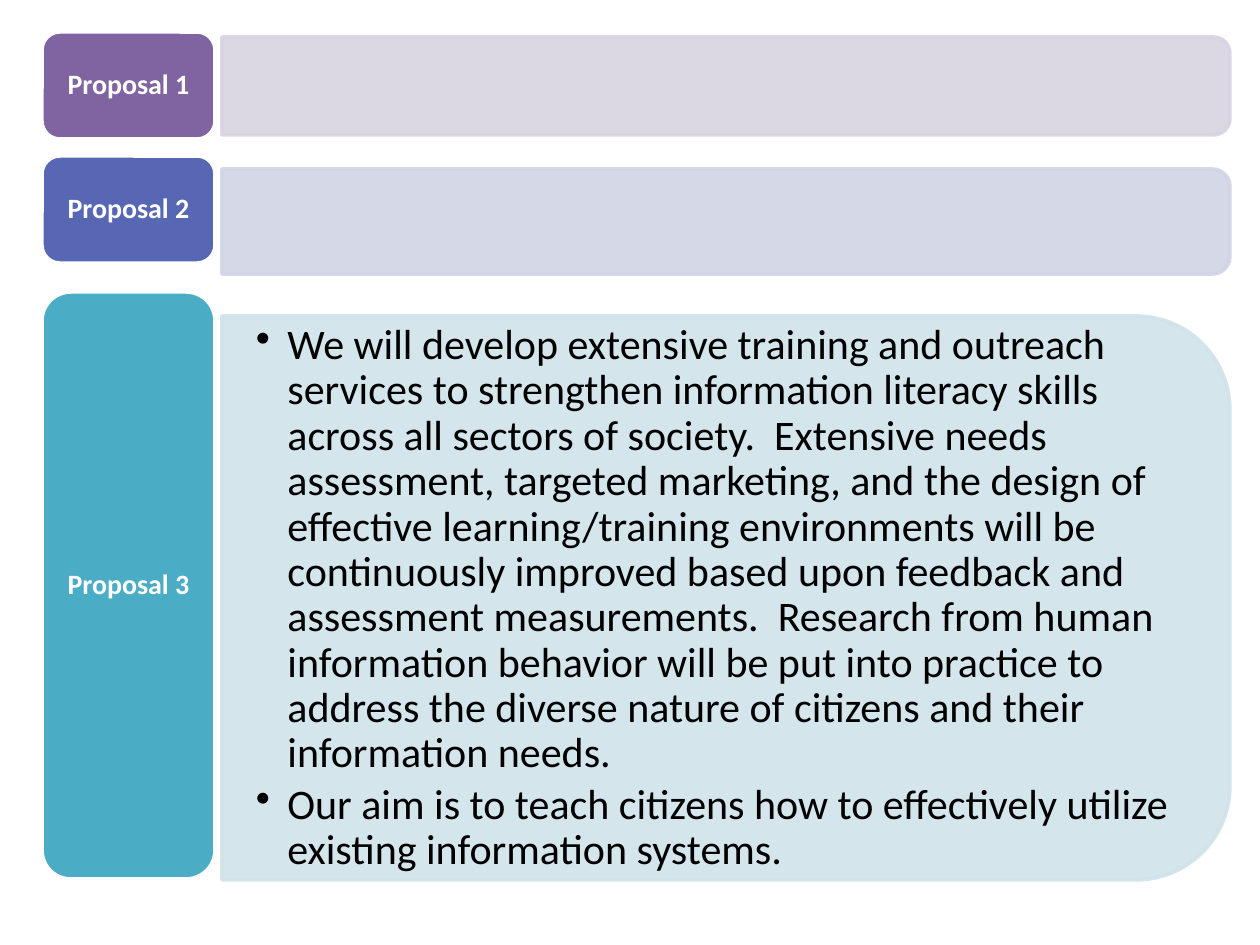
import pptx
import pptx.util
import pptx.dml.color
import pptx.enum.shapes
import pptx.enum.text
import pptx.oxml.ns
import lxml.etree

PX = 914400 / 126
HUES = {
    "white": "FFFFFF", "black": "000000",
    "purple": "8064A2", "lilac": "D8D3E0",
    "blue": "5767B4", "mist": "D1D4E5",
    "teal": "4BACC6", "ice": "D0E3EA",
}
KIND = pptx.enum.shapes.MSO_SHAPE
ALIGN = pptx.enum.text.PP_ALIGN
QN = pptx.oxml.ns.qn

deck = pptx.Presentation()
deck.slide_width = pptx.util.Inches(10)
deck.slide_height = pptx.util.Inches(7.5)
slide = deck.slides.add_slide(deck.slide_layouts[6])


def block(kind, box, fill, edge):
    shape = slide.shapes.add_shape(kind, *[round(n * PX) for n in box])
    shape.shadow.inherit = False
    shape.fill.solid()
    shape.fill.fore_color.rgb = pptx.dml.color.RGBColor.from_string(HUES[fill])
    shape.line.color.rgb = pptx.dml.color.RGBColor.from_string(HUES[edge])
    shape.line.width = pptx.util.Pt(2)
    return shape


def write(shape, lines, pads, look, form):
    frame = shape.text_frame
    frame.word_wrap = True
    frame.vertical_anchor = pptx.enum.text.MSO_ANCHOR.MIDDLE
    for side, pad in zip(("left", "top", "right", "bottom"), pads):
        setattr(frame, "margin_" + side, round(pad * PX))
    frame.text = "\n".join(lines)
    for para in frame.paragraphs:
        for name, value in form.items():
            setattr(para, name, value)
        font = para.runs[0].font
        for name, value in look.items():
            if name == "color":
                font.color.rgb = pptx.dml.color.RGBColor.from_string(HUES[value])
            else:
                setattr(font, name, value)


label = {"name": "Calibri", "size": pptx.util.Pt(16), "bold": True, "color": "white"}
body = {"name": "Calibri", "size": pptx.util.Pt(24), "color": "black"}
center = {"alignment": ALIGN.CENTER, "line_spacing": 0.9}
listed = {"alignment": ALIGN.LEFT, "line_spacing": 0.9,
          "space_after": pptx.util.Pt(3.6), "level": 1}

rows = [
    ("Proposal 1", 32, 107, "purple", 37, 98, "lilac"),
    ("Proposal 2", 156, 107, "blue", 169, 105, "mist"),
    ("Proposal 3", 292, 587, "teal", 316, 564, "ice"),
]
left, wide = 222, 1008
for title, top, tall, dark, start, high, pale in rows:
    mid_x, mid_y = left + wide / 2, start + high / 2
    bar = block(KIND.ROUND_2_SAME_RECTANGLE,
                (mid_x - high / 2, mid_y - wide / 2, high, wide), pale, pale)
    bar.rotation = 90
    for tint in bar.element.spPr.iter(QN("a:srgbClr")):
        lxml.etree.SubElement(tint, QN("a:alpha"), val="90000")
    tile = block(KIND.ROUNDED_RECTANGLE, (42, top, 173, tall), dark, "white")
    write(tile, [title], (9, 4, 9, 4), label, center)

points = [
    "We will develop extensive training and outreach services to strengthen "
    "information literacy skills across all sectors of society.  Extensive needs "
    "assessment, targeted marketing, and the design of effective learning/training "
    "environments will be continuously improved based upon feedback and assessment "
    "measurements.  Research from human information behavior will be put into "
    "practice to address the diverse nature of citizens and their information needs.",
    "Our aim is to teach citizens how to effectively utilize existing information "
    "systems.",
]
note = slide.shapes.add_textbox(*[round(n * PX) for n in (left, 344, 980, 509)])
write(note, points, (34, 18, 33, 18), body, listed)
indent = pptx.util.Inches(0.25)
for para in note.text_frame.paragraphs:
    props = para._p.get_or_add_pPr()
    props.set("marL", str(indent))
    props.set("indent", str(-indent))
    lxml.etree.SubElement(props, QN("a:buChar"), char="•")

deck.save("out.pptx")
